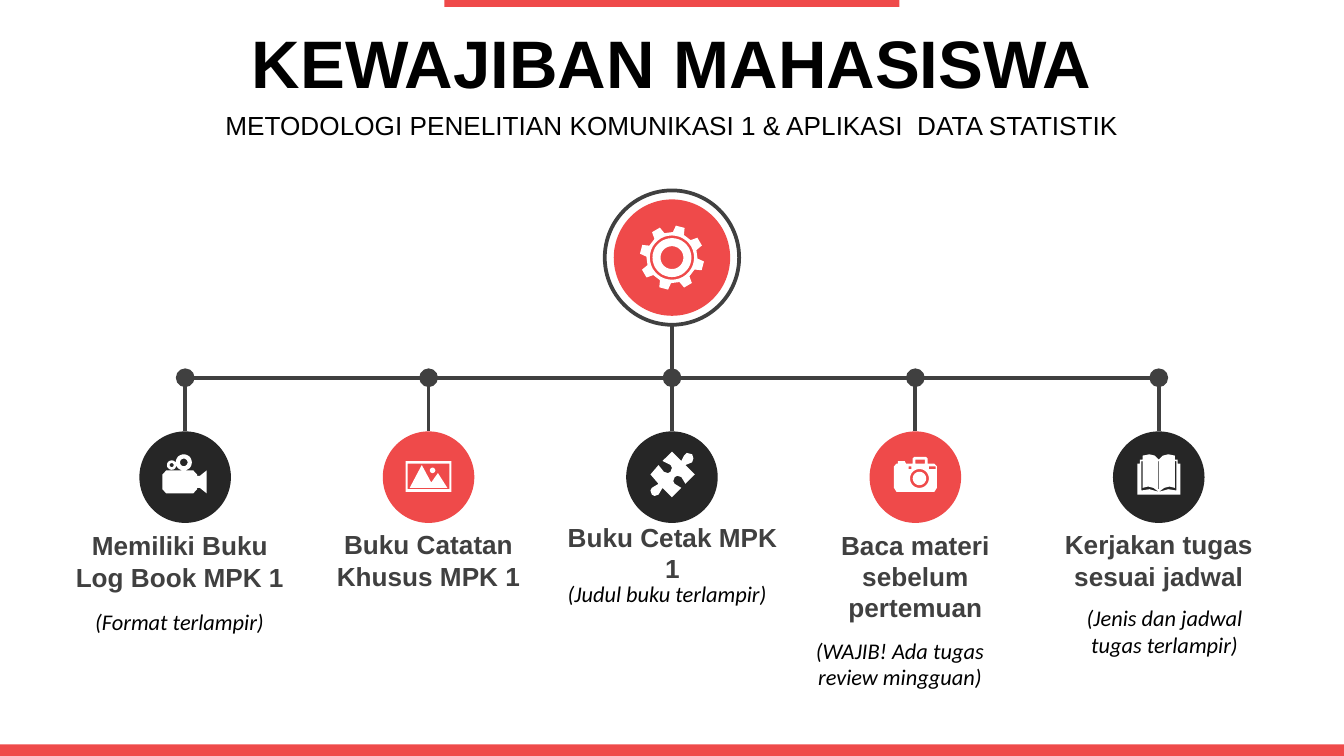
import math

import lxml.etree
import pptx
import pptx.dml.color
import pptx.enum.shapes
import pptx.enum.text
import pptx.oxml.ns
import pptx.util

Cm = pptx.util.Cm
Pt = pptx.util.Pt
Kind = pptx.enum.shapes.MSO_SHAPE
qn = pptx.oxml.ns.qn

COLORS = {"red": "EF4A4A", "dark": "262626", "gray": "404040", "white": "FFFFFF", "black": "000000"}
UNITS_PER_STEP = 10
ICON_UNIT = Cm(25.4) / 1000 / UNITS_PER_STEP


def rgb(name):
    return pptx.dml.color.RGBColor.from_string(COLORS[name])


def polar(radius, degrees, x=0, y=0):
    angle = math.radians(degrees)
    return x + radius * math.sin(angle), y - radius * math.cos(angle)


def circle(x, y, radius):
    return [polar(radius, degrees, x, y) for degrees in range(0, 360, 10)]


def box(left, top, right, bottom):
    return [(left, top), (right, top), (right, bottom), (left, bottom)]


def mirror(points):
    return [(-x, y) for x, y in reversed(points)]


def gear():
    tooth = [(-8, 24), (8, 24), (13, 19), (32, 19)]
    teeth = [polar(radius, 15 + 45 * index + turn) for index in range(8) for turn, radius in tooth]
    return [teeth, circle(0, 0, 16.5), circle(0, 0, 14.5), circle(0, 0, 8.5)]


def book():
    half = [(0, -13), (3, -16), (7, -17), (12, -16), (12, -13), (14, -13), (14, -10), (16, -10), (16, 13)]
    slit = [(12, -12), (13, -12), (13, 10), (7, 9), (0, 11), (4, 8), (8, 7), (12, 8)]
    return [half + mirror(half), slit, mirror(slit), box(-0.3, -12, 0.3, 9)]


VIDEO = [
    [(-14, -5), (6, -5), (9, -2), (9, -1), (11, -1), (16, -5), (16, 12), (11, 8), (9, 8),
     (9, 9), (6, 12), (-14, 12), (-17, 9), (-17, -2)],
    circle(-10, -9, 3.5), circle(-10, -9, 1.5), circle(-1, -11, 6), circle(-1, -11, 2.8),
]
PHOTO = [
    box(-17, -12, 17, 11), box(-15.5, -10, 15.5, 9),
    [(-5, -9), (2, 4), (7, -3), (14, 8), (-14, 8)], circle(3, -5, 2),
]
PUZZLE = [[
    (11, -18), (15, -17), (16, -14), (15, -11), (10, -9), (17, -2), (10, 5), (7, 0), (4, -1), (2, 0),
    (1, 3), (2, 5), (7, 8), (0, 15), (-7, 8), (-10, 13), (-13, 14), (-15, 13), (-16, 10), (-15, 8),
    (-10, 5), (-16, -2), (-10, -9), (-6, -4), (-3, -3), (-1, -4), (0, -7), (-1, -9), (-7, -12),
    (0, -19), (7, -12), (9, -16),
]]
CAMERA = [
    [(-1, -15), (8, -15), (9, -14), (9, -10), (14, -10), (16, -8), (16, 8), (14, 11), (-14, 11),
     (-16, 8), (-16, -8), (-14, -10), (-13, -10), (-13, -12), (-8, -12), (-7, -10), (-2, -10), (-2, -14)],
    box(-5, -8, -3, -6), box(10, -8, 15, -6), box(0, -13, 7, -10), circle(3, 1, 7), circle(3, 1, 5),
]


class Painter:
    def __init__(self, page):
        self.page = page

    def shape(self, kind, left, top, width, height, fill, line=None):
        item = self.page.shapes.add_shape(kind, Cm(left), Cm(top), Cm(width), Cm(height))
        self.finish(item, fill, line)

    def finish(self, item, fill, line=None):
        item.shadow.inherit = False
        item.fill.solid()
        item.fill.fore_color.rgb = rgb(fill)
        if line:
            item.line.color.rgb = rgb(line)
            item.line.width = Pt(2)
        else:
            item.line.fill.background()

    def disc(self, x, y, size, fill, line=None):
        self.shape(Kind.OVAL, x - size / 2, y - size / 2, size, size, fill, line)

    def icon(self, x, y, contours):
        scaled = [[(px * UNITS_PER_STEP, py * UNITS_PER_STEP) for px, py in points] for points in contours]
        builder = self.page.shapes.build_freeform(*scaled[0][0], scale=ICON_UNIT)
        for index, points in enumerate(scaled):
            if index:
                builder.move_to(*points[0])
            builder.add_line_segments(points[1:], close=True)
        self.finish(builder.convert_to_shape(Cm(x), Cm(y)), "white")

    def line(self, x1, y1, x2, y2, dot=False):
        link = self.page.shapes.add_connector(
            pptx.enum.shapes.MSO_CONNECTOR.STRAIGHT, Cm(x1), Cm(y1), Cm(x2), Cm(y2))
        link.line.color.rgb = rgb("gray")
        link.line.width = Pt(2)
        if dot:
            stroke = link.line._get_or_add_ln()
            lxml.etree.SubElement(stroke, qn("a:headEnd"), type="oval", w="lg", len="lg")
        lxml.etree.SubElement(link._element.spPr, qn("a:effectLst"))

    def text(self, words, left, top, width, height, size=14, color="black", font="Arial",
             bold=False, italic=False, middle=True, before=0, first_right=0):
        area = self.page.shapes.add_textbox(Cm(left), Cm(top), Cm(width), Cm(height))
        frame = area.text_frame
        frame.word_wrap = True
        anchors = pptx.enum.text.MSO_ANCHOR
        frame.vertical_anchor = anchors.MIDDLE if middle else anchors.TOP
        frame.text = words
        for para in frame.paragraphs:
            para.alignment = pptx.enum.text.PP_ALIGN.CENTER
            para.space_before = Pt(before)
            for span in para.runs:
                span.font.name = font
                span.font.size = Pt(size)
                span.font.bold = bold
                span.font.italic = italic
                span.font.color.rgb = rgb(color)
        if first_right:
            frame.paragraphs[0]._p.get_or_add_pPr().set("marR", str(Cm(first_right)))

    def heading(self, words, *place):
        self.text(words, *place, color="gray", bold=True)

    def caption(self, words, *place, first_right=0):
        self.text(words, *place, size=12, font="Calibri", italic=True, middle=False, first_right=first_right)


def main():
    deck = pptx.Presentation()
    deck.slide_width, deck.slide_height = Cm(25.4), Cm(14.29)
    painter = Painter(deck.slides.add_slide(deck.slide_layouts[6]))

    painter.shape(Kind.RECTANGLE, 8.4, 0, 8.6, 0.13, "red")
    painter.shape(Kind.RECTANGLE, 0, 14.07, 25.4, 0.22, "red")
    painter.text("KEWAJIBAN MAHASISWA", 0, 0.36, 25.4, 1.6, size=36, bold=True, before=7)
    painter.text("METODOLOGI PENELITIAN KOMUNIKASI 1 & APLIKASI  DATA STATISTIK",
                 0, 1.96, 25.4, 0.79, before=3)

    center, hub_y, rail_y, step, disc_y, disc_size = 12.7, 4.87, 7.14, 4.6, 9.02, 1.73
    painter.disc(center, hub_y, 2.54, "white", "gray")
    painter.disc(center, hub_y, 2.2, "red")
    painter.icon(center, hub_y, gear())
    painter.line(center, hub_y + 1.27, center, rail_y)
    painter.line(center - 2 * step, rail_y, center + 2 * step, rail_y)

    for index, contours in enumerate([VIDEO, PHOTO, PUZZLE, CAMERA, book()]):
        x = center + (index - 2) * step
        painter.line(x, rail_y, x, disc_y - disc_size / 2, dot=True)
        painter.disc(x, disc_y, disc_size, "red" if index % 2 else "dark")
        painter.icon(x, disc_y, contours)

    painter.heading("Memiliki Buku Log Book MPK 1", 1.1, 9.88, 4.6, 1.45)
    painter.heading("Buku Catatan Khusus MPK 1", 5.94, 9.86, 4.32, 1.45)
    painter.heading("Buku Cetak MPK 1", 10.41, 10.01, 4.6, 0.86)
    painter.heading("Baca materi sebelum pertemuan", 15.14, 9.86, 4.32, 2.06)
    painter.heading("Kerjakan tugas sesuai jadwal", 19.74, 9.86, 4.32, 1.45)
    painter.caption("(Format terlampir)", 1.4, 11.38, 3.99, 0.76)
    painter.caption("(Judul buku terlampir)", 10.31, 10.85, 4.6, 0.76)
    painter.caption("(WAJIB! Ada tugas\nreview mingguan)", 15.09, 11.91, 4.6, 1.27, first_right=0.76)
    painter.caption("(Jenis dan jadwal tugas terlampir)", 20.22, 11.3, 3.58, 1.27)

    deck.save("out.pptx")


if __name__ == "__main__":
    main()
